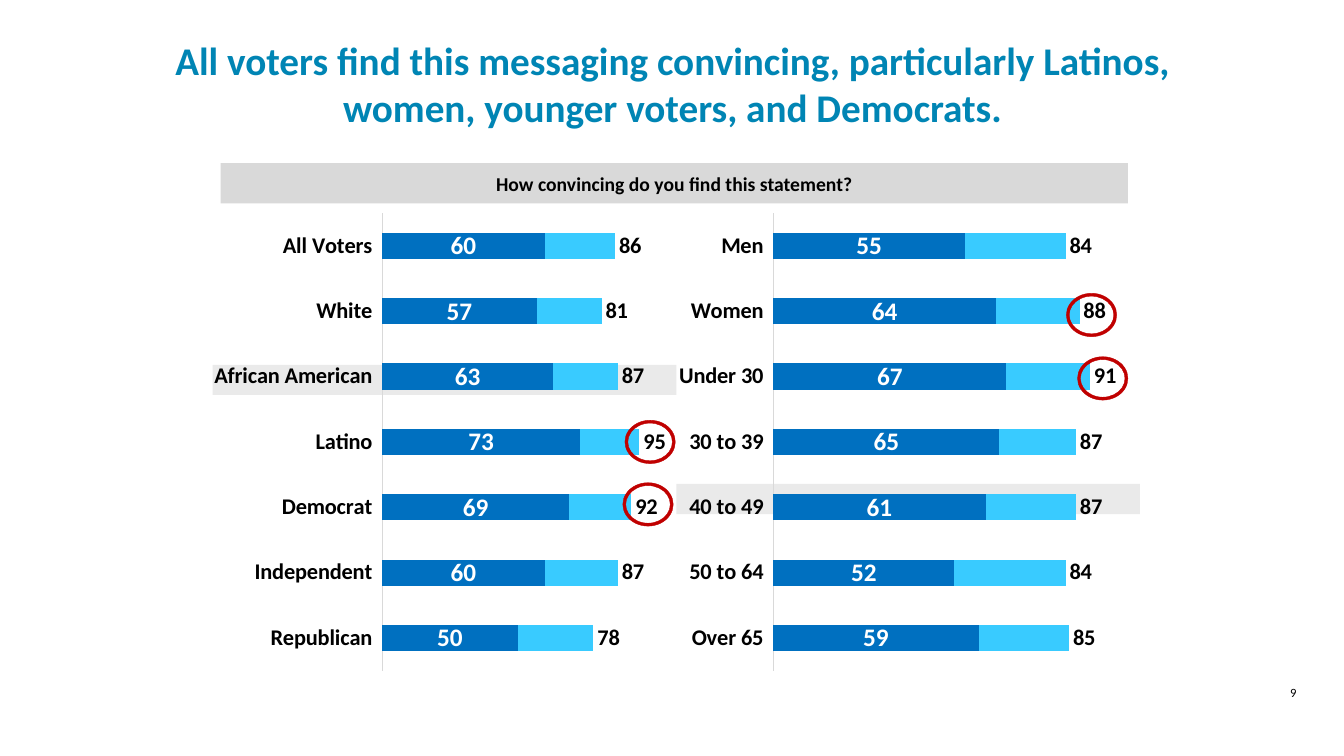
from dataclasses import dataclass

from lxml.etree import SubElement
from pptx import Presentation
from pptx.chart.data import CategoryChartData
from pptx.dml.color import RGBColor as RGB
from pptx.enum.chart import XL_CHART_TYPE as CT, XL_LABEL_POSITION as LP, XL_TICK_LABEL_POSITION as TLP, XL_TICK_MARK as TM
from pptx.enum.shapes import MSO_SHAPE as SH
from pptx.enum.text import MSO_ANCHOR as ANCHOR, MSO_AUTO_SIZE as AUTO, PP_ALIGN as AL
from pptx.oxml.ns import qn
from pptx.util import Pt


@dataclass(frozen=True)
class Theme:
    """Fonts, type sizes and colours of the slide."""
    font: str = "Calibri"
    title_size: int = 28
    header_size: int = 14
    category_size: int = 16
    value_size: int = 18
    total_size: int = 16
    number_size: int = 9
    title: RGB = RGB(0x00, 0x85, 0xB4)
    text: RGB = RGB(0, 0, 0)
    white: RGB = RGB(255, 255, 255)
    header: RGB = RGB(0xD9, 0xD9, 0xD9)
    stripe: RGB = RGB(0xEA, 0xEA, 0xEA)
    very: RGB = RGB(0x00, 0x70, 0xC0)
    somewhat: RGB = RGB(0x39, 0xCB, 0xFF)
    ring: RGB = RGB(0xC0, 0, 0)


T = Theme()

VOTER_GROUPS = dict(
    rows=[("Republican", 50, 28, 78), ("Independent", 60, 27, 87), ("Democrat", 69, 23, 92),
          ("Latino", 73, 22, 95), ("African American", 63, 24, 87), ("White", 57, 24, 81),
          ("All Voters", 60, 26, 86)],
    plot=(0.374, 0.597), stripe_y=115.2, rings=[(294.5, 154.8), (293, 199.4)])
GENDER_AND_AGE = dict(
    rows=[("Over 65", 59, 26, 85), ("50 to 64", 52, 32, 84), ("40 to 49", 61, 26, 87),
          ("30 to 39", 65, 22, 87), ("Under 30", 67, 24, 91), ("Women", 64, 24, 88),
          ("Men", 55, 29, 84)],
    plot=(0.214, 0.767), stripe_y=200.2, rings=[(286.6, 109.4), (278.6, 64.1)])


def style_font(font, size, color, bold=True):
    """Apply the theme font with a size and colour."""
    font.name, font.size, font.bold = T.font, Pt(size), bold
    font.color.rgb = color


def write(tf, text, size, color, bold=True):
    """Write one centred run in a text frame."""
    tf.word_wrap = True
    p = tf.paragraphs[0]
    p.alignment = AL.CENTER
    r = p.add_run()
    r.text = text
    style_font(r.font, size, color, bold)


def add_block(s, kind, box, color):
    """Add a flat filled shape without an outline."""
    sp = s.shapes.add_shape(kind, *map(Pt, box))
    sp.shadow.inherit = False
    sp.fill.solid()
    sp.fill.fore_color.rgb = color
    sp.line.fill.background()
    return sp


def add_title(s, box, text):
    """Place and fill the title placeholder."""
    sp = s.shapes.title
    sp.left, sp.top, sp.width, sp.height = map(Pt, box)
    tf = sp.text_frame
    tf.auto_size, tf.vertical_anchor = AUTO.NONE, ANCHOR.MIDDLE
    tf.margin_left = tf.margin_right = Pt(20)
    write(tf, text, T.title_size, T.title)


def add_header(s, box, text):
    """Add the grey question bar."""
    tf = add_block(s, SH.RECTANGLE, box, T.header).text_frame
    tf.vertical_anchor = ANCHOR.MIDDLE
    write(tf, text, T.header_size, T.text)


def add_number(s, box, text):
    """Add the slide number."""
    write(s.shapes.add_textbox(*map(Pt, box)).text_frame, text, T.number_size, T.text, False)


def set_plot_area(chart, x, w, y=0.02, h=0.96):
    """Fix the inner plot area as fractions of the chart."""
    area = chart.plots[0]._element.getparent()
    layout = area.find(qn("c:layout"))
    if layout is None:
        layout = SubElement(area, qn("c:layout"))
        area.insert(0, layout)
    manual = SubElement(layout, qn("c:manualLayout"))
    values = dict(layoutTarget="inner", xMode="edge", yMode="edge", x=x, y=y, w=w, h=h)
    for tag, value in values.items():
        SubElement(manual, qn(f"c:{tag}")).set("val", str(value))


def add_labels(series, size, color, position):
    """Show the values of a series."""
    labels = series.data_labels
    labels.show_value, labels.position = True, position
    style_font(labels.font, size, color)


def add_bars(s, box, rows, plot):
    """Add a stacked bar chart with totals after the bars."""
    names, *columns = zip(*rows)
    data = CategoryChartData()
    data.categories = names
    for i, values in enumerate(columns, 1):
        data.add_series(f"Series {i}", values)
    chart = s.shapes.add_chart(CT.BAR_STACKED, *map(Pt, box), data).chart
    chart.has_legend = chart.has_title = False
    style_font(chart.font, 10, T.text, False)
    set_plot_area(chart, *plot)
    bars = chart.plots[0]
    bars.gap_width, bars.overlap, bars.vary_by_categories = 150, 100, False

    cat, val = chart.category_axis, chart.value_axis
    cat.major_tick_mark = cat.minor_tick_mark = TM.NONE
    cat.tick_label_position = TLP.LOW
    style_font(cat.tick_labels.font, T.category_size, T.text)
    cat.format.line.color.rgb, cat.format.line.width = T.header, Pt(0.75)
    val.minimum_scale, val.maximum_scale = 0, 100
    val.has_major_gridlines = val.visible = False

    very, somewhat, total = bars.series
    for series, color in ((very, T.very), (somewhat, T.somewhat)):
        series.format.fill.solid()
        series.format.fill.fore_color.rgb = color
    total.format.fill.background()
    add_labels(very, T.value_size, T.white, LP.CENTER)
    add_labels(total, T.total_size, T.text, LP.INSIDE_BASE)


def add_panel(s, box, rows, plot, stripe_y, rings):
    """Add a chart with its row stripe and ringed totals."""
    x, y, w, h = box
    add_block(s, SH.RECTANGLE, (x, y + stripe_y, 331.2, 21.6), T.stripe)
    add_bars(s, box, rows, plot)
    for dx, dy in rings:
        ring = add_block(s, SH.DONUT, (x + dx, y + dy, 36, 31), T.ring)
        ring.adjustments[0] = 0.067
        ring.line.color.rgb, ring.line.width = T.ring, Pt(0.25)


def main():
    """Build and save the slide."""
    prs = Presentation()
    prs.slide_width, prs.slide_height = Pt(960), Pt(540)
    s = prs.slides.add_slide(prs.slide_layouts[5])
    add_title(s, (71.3, 18, 818, 83.5),
              "All voters find this messaging convincing, particularly Latinos, "
              "women, younger voters, and Democrats.")
    add_header(s, (157.7, 116.6, 648, 28.8), "How convincing do you find this statement?")
    for x, panel in ((151.9, VOTER_GROUPS), (483.1, GENDER_AND_AGE)):
        add_panel(s, (x, 145.4, 324, 340.6), **panel)
    add_number(s, (887.8, 486, 72, 23.8), "9")
    prs.save("out.pptx")


if __name__ == "__main__":
    main()
